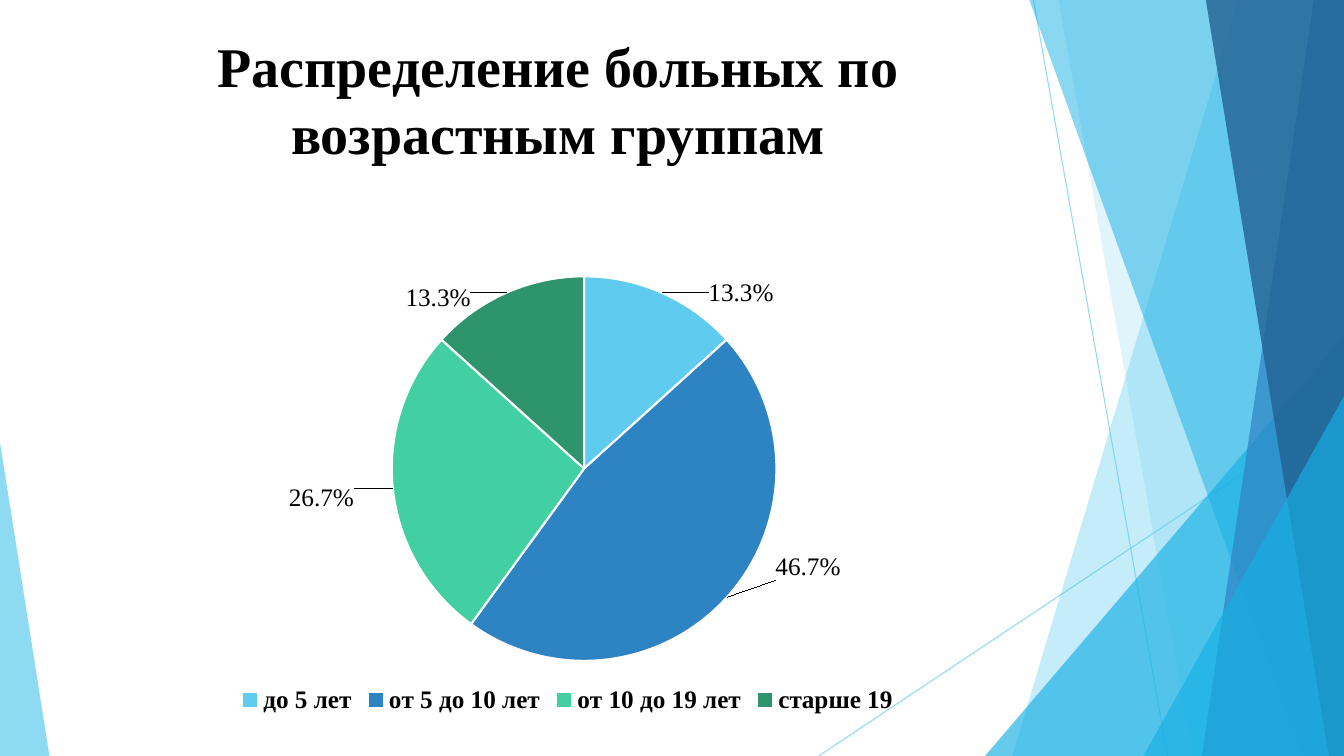
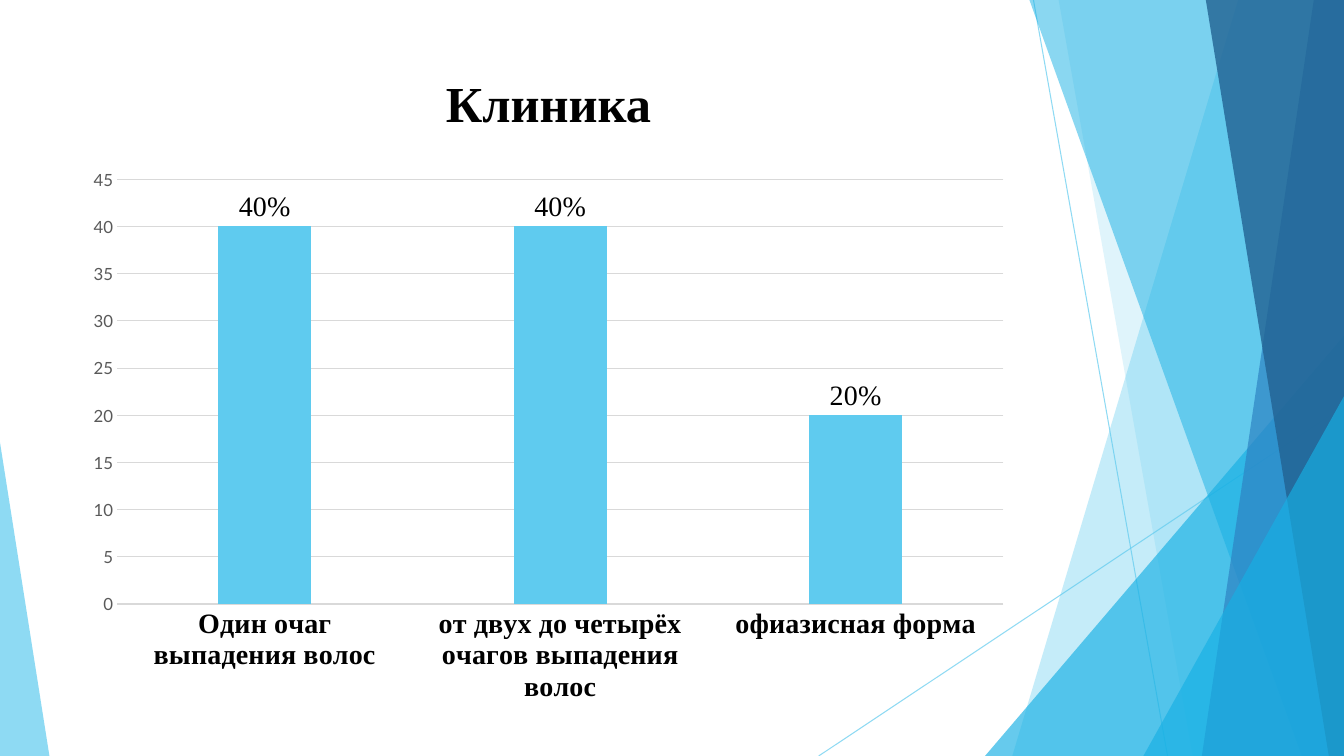
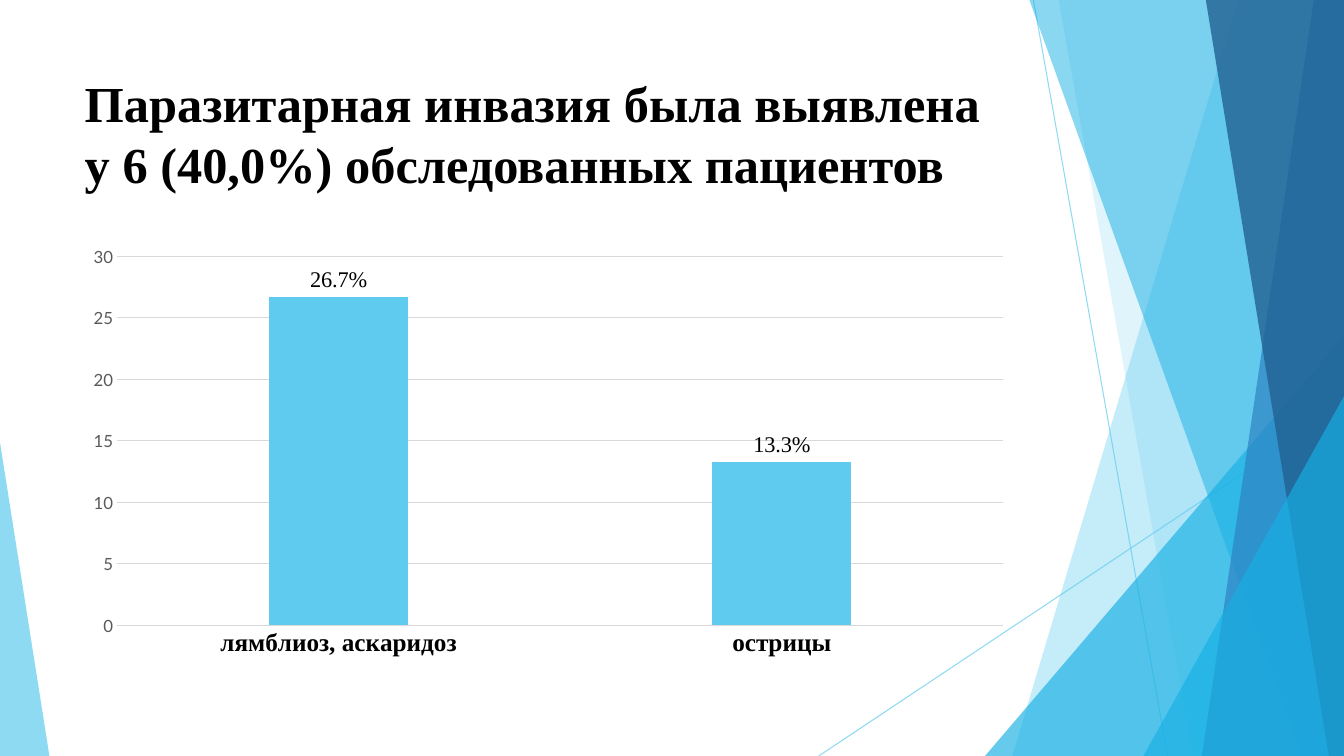
from lxml import etree
from pptx import Presentation
from pptx.chart.data import CategoryChartData
from pptx.dml.color import RGBColor
from pptx.enum.chart import XL_CHART_TYPE, XL_LABEL_POSITION, XL_LEGEND_POSITION, XL_TICK_MARK
from pptx.enum.shapes import MSO_CONNECTOR, MSO_SHAPE
from pptx.enum.text import MSO_ANCHOR, MSO_AUTO_SIZE, PP_ALIGN
from pptx.oxml import parse_xml
from pptx.oxml.ns import nsdecls, qn
from pptx.util import Inches, Pt

PIE, COLUMN = XL_CHART_TYPE.PIE, XL_CHART_TYPE.COLUMN_CLUSTERED
OUTSIDE_END = XL_LABEL_POSITION.OUTSIDE_END
LEGEND_BOTTOM = XL_LEGEND_POSITION.BOTTOM
NO_TICK = XL_TICK_MARK.NONE
STRAIGHT = MSO_CONNECTOR.STRAIGHT
TRIANGLE = MSO_SHAPE.ISOSCELES_TRIANGLE
TOP, NO_AUTOFIT = MSO_ANCHOR.TOP, MSO_AUTO_SIZE.NONE
LEFT, CENTER = PP_ALIGN.LEFT, PP_ALIGN.CENTER

WIDTH, HEIGHT = 13.33, 7.5
TITLE_ONLY = 5
SERIF, SANS = "Times New Roman", "Lato"
BLACK, WHITE, GRAY, GRID = "000000", "FFFFFF", "595959", "D9D9D9"
SKY, CYAN, BLUE, NAVY = "5FCBEF", "17B0E4", "2E83C3", "226292"
MINT, GREEN = "42D0A2", "2E946B"

# Content
SLIDES = [
    {
        "title": "Распределение больных по возрастным группам",
        "title_box": (0.57, 0.26, 9.93, 1.44), "title_size": 40, "align": CENTER,
        "chart": PIE, "chart_box": (0.18, 2.36, 10.9, 4.77),
        "values": {"до 5 лет": 13.3, "от 5 до 10 лет": 46.7,
                   "от 10 до 19 лет": 26.7, "старше 19": 13.3},
        "format": '0.0"%"', "label_size": 18, "category_size": 18,
    },
    {
        "title": "Клиника",
        "title_box": (0.74, 0.67, 9.4, 0.79), "title_size": 36, "align": CENTER,
        "chart": COLUMN, "chart_box": (0.74, 1.57, 9.4, 5.51), "maximum": 45,
        "values": {"Один очаг выпадения волос": 40,
                   "от двух до четырёх очагов выпадения волос": 40,
                   "офиазисная форма": 20},
        "format": '0"%"', "label_size": 20, "category_size": 20,
    },
    {
        "title": "Паразитарная инвазия была выявлена у 6 (40,0%) обследованных пациентов",
        "title_box": (0.74, 0.67, 9.4, 1.44), "title_size": 36, "align": LEFT,
        "chart": COLUMN, "chart_box": (0.74, 2.36, 9.4, 4.24), "maximum": 30,
        "values": {"лямблиоз, аскаридоз": 26.7, "острицы": 13.3},
        "format": '0.0"%"', "label_size": 16, "category_size": 18,
    },
]

# Pie geometry as fractions of the chart: plot area, then label offsets
PIE_PLOT = {"x": 0.34, "y": 0.08, "w": 0.35, "h": 0.8}
PIE_COLORS = [SKY, BLUE, MINT, GREEN]
PIE_LABEL_OFFSETS = [(0.04, 0.04), (0.04, -0.1), (-0.03, -0.01), (-0.03, 0.05)]

# Decoration, back to front
RAYS = [((10.25, 0), (11.58, HEIGHT)), ((WIDTH, 4.03), (8.12, HEIGHT))]
# Bands run to the right edge: top left x, bottom left x, colour, opacity
# Triangles: box, apex position, colour, opacity
FACETS = [
    ("band", (12.28, 10.04), SKY, 36),
    ("band", (10.5, 11.83), SKY, 20),
    ("triangle", (9.77, 3.33, 3.56, 4.17), 1, CYAN, 66),
    ("band", (10.21, 12.91), CYAN, 50),
    ("band", (13.03, 11.92), BLUE, 70),
    ("band", (11.96, 13.18), NAVY, 80),
    ("triangle", (11.34, 3.93, 1.99, 3.57), 1, CYAN, 66),
    ("triangle", (0, 4.39, 0.49, 3.11), 0, SKY, 70),
]


def rgb(color):
    return RGBColor.from_string(color)


def inches(values):
    return [Inches(value) for value in values]


def paint(fill, color):
    fill.solid()
    fill.fore_color.rgb = rgb(color)


def set_font(font, size, color=BLACK, name=SERIF, bold=False):
    for key, value in {"size": Pt(size), "name": name, "bold": bold}.items():
        setattr(font, key, value)
    font.color.rgb = rgb(color)


def set_opacity(shape, percent):
    for color in shape.element.spPr.iter(qn("a:srgbClr")):
        etree.SubElement(color, qn("a:alpha")).set("val", str(percent * 1000))


def set_line(line, color, width=0.75):
    line.color.rgb = rgb(color)
    line.width = Pt(width)


def draw_ray(shapes, start, end):
    ray = shapes.add_connector(STRAIGHT, *inches(start + end))
    set_line(ray.line, SKY)
    set_opacity(ray, 70)
    etree.SubElement(ray.element.spPr, qn("a:effectLst"))
    return ray


def draw_facet(shapes, kind, geometry, *look):
    *apex, color, opacity = look
    if kind == "band":
        top_x, bottom_x = geometry
        outline = shapes.build_freeform(Inches(top_x), 0)
        corners = [(WIDTH, 0), (WIDTH, HEIGHT), (bottom_x, HEIGHT)]
        outline.add_line_segments([inches(corner) for corner in corners], close=True)
        facet = outline.convert_to_shape()
    else:
        facet = shapes.add_shape(TRIANGLE, *inches(geometry))
        facet.adjustments[0] = apex[0]
    facet.shadow.inherit = False
    paint(facet.fill, color)
    facet.line.fill.background()
    set_opacity(facet, opacity)
    return facet


def decorate_layout(layout, slide):
    """Draw the decoration on a slide, then move it to the shared layout."""
    parts = [draw_ray(slide.shapes, *ray) for ray in RAYS]
    parts += [draw_facet(slide.shapes, *facet) for facet in FACETS]
    for number, part in enumerate(parts, 100):
        part.element.xpath(".//p:cNvPr")[0].set("id", str(number))
        layout.shapes.element.append(part.element)


def write_title(slide, content):
    title = slide.shapes.title
    title.left, title.top, title.width, title.height = inches(content["title_box"])
    frame = title.text_frame
    frame.text = content["title"]
    frame_format = {"word_wrap": True, "vertical_anchor": TOP, "auto_size": NO_AUTOFIT}
    for key, value in frame_format.items():
        setattr(frame, key, value)
    paragraph = frame.paragraphs[0]
    paragraph.alignment = content["align"]
    set_font(paragraph.runs[0].font, content["title_size"], bold=True)


def manual_layout(modes, places):
    items = [f'<c:{key}Mode val="{mode}"/>' for key, mode in modes.items()]
    items += [f'<c:{key} val="{value}"/>' for key, value in places.items()]
    return parse_xml(f'<c:layout {nsdecls("c")}><c:manualLayout>{"".join(items)}'
                     "</c:manualLayout></c:layout>")


def format_pie(chart, content):
    chart.has_legend = True
    chart.legend.position = LEGEND_BOTTOM
    chart.legend.include_in_layout = False
    set_font(chart.legend.font, content["category_size"], bold=True)

    # Fixed plot area
    plot_area = chart.element.find(".//" + qn("c:plotArea"))
    for layout in plot_area.findall(qn("c:layout")):
        plot_area.remove(layout)
    layout = manual_layout({"x": "edge", "y": "edge"}, PIE_PLOT)
    layout[0].insert(0, parse_xml(f'<c:layoutTarget {nsdecls("c")} val="inner"/>'))
    plot_area.insert(0, layout)

    # Slices and their shifted labels
    series = chart.plots[0].series[0]
    for index, color in enumerate(PIE_COLORS):
        point = series.points[index]
        paint(point.format.fill, color)
        set_line(point.format.line, WHITE, 1.5)
        set_font(point.data_label.font, content["label_size"])
        point.data_label.position = OUTSIDE_END
    labels = list(plot_area.iter(qn("c:dLbl")))
    for label, (x, y) in zip(labels, PIE_LABEL_OFFSETS):
        number_format = etree.Element(qn("c:numFmt"))
        number_format.set("formatCode", content["format"])
        number_format.set("sourceLinked", "0")
        label.insert(1, manual_layout({}, {"x": x, "y": y}))
        label.insert(2, number_format)


def format_columns(chart, content):
    chart.has_legend = False
    plot = chart.plots[0]
    plot_format = {"gap_width": 219, "overlap": -27, "vary_by_categories": False}
    for key, value in plot_format.items():
        setattr(plot, key, value)
    paint(plot.series[0].format.fill, SKY)

    category_axis, value_axis = chart.category_axis, chart.value_axis
    for axis in (category_axis, value_axis):
        axis.major_tick_mark = axis.minor_tick_mark = NO_TICK
    set_font(category_axis.tick_labels.font, content["category_size"], bold=True)
    set_line(category_axis.format.line, GRID)
    set_font(value_axis.tick_labels.font, 12, GRAY, SANS)
    scale = {"minimum_scale": 0, "maximum_scale": content["maximum"], "major_unit": 5}
    for key, value in scale.items():
        setattr(value_axis, key, value)
    value_axis.format.line.fill.background()
    set_line(value_axis.major_gridlines.format.line, GRID)


def add_chart(slide, content):
    data = CategoryChartData()
    data.categories = list(content["values"])
    data.add_series("Series 1", list(content["values"].values()))
    box = inches(content["chart_box"])
    chart = slide.shapes.add_chart(content["chart"], *box, data).chart
    chart.has_title = False
    set_font(chart.font, 10, name=SANS)

    labels = chart.plots[0].series[0].data_labels
    label_format = {"show_value": True, "number_format": content["format"],
                    "number_format_is_linked": False, "position": OUTSIDE_END}
    for key, value in label_format.items():
        setattr(labels, key, value)
    set_font(labels.font, content["label_size"])

    format_chart = format_pie if content["chart"] == PIE else format_columns
    format_chart(chart, content)


def main():
    presentation = Presentation()
    presentation.slide_width, presentation.slide_height = inches((WIDTH, HEIGHT))
    layout = presentation.slide_layouts[TITLE_ONLY]
    paint(presentation.slide_master.background.fill, WHITE)
    for number, content in enumerate(SLIDES):
        slide = presentation.slides.add_slide(layout)
        if number == 0:
            decorate_layout(layout, slide)
        write_title(slide, content)
        add_chart(slide, content)
    presentation.save("out.pptx")


if __name__ == "__main__":
    main()
